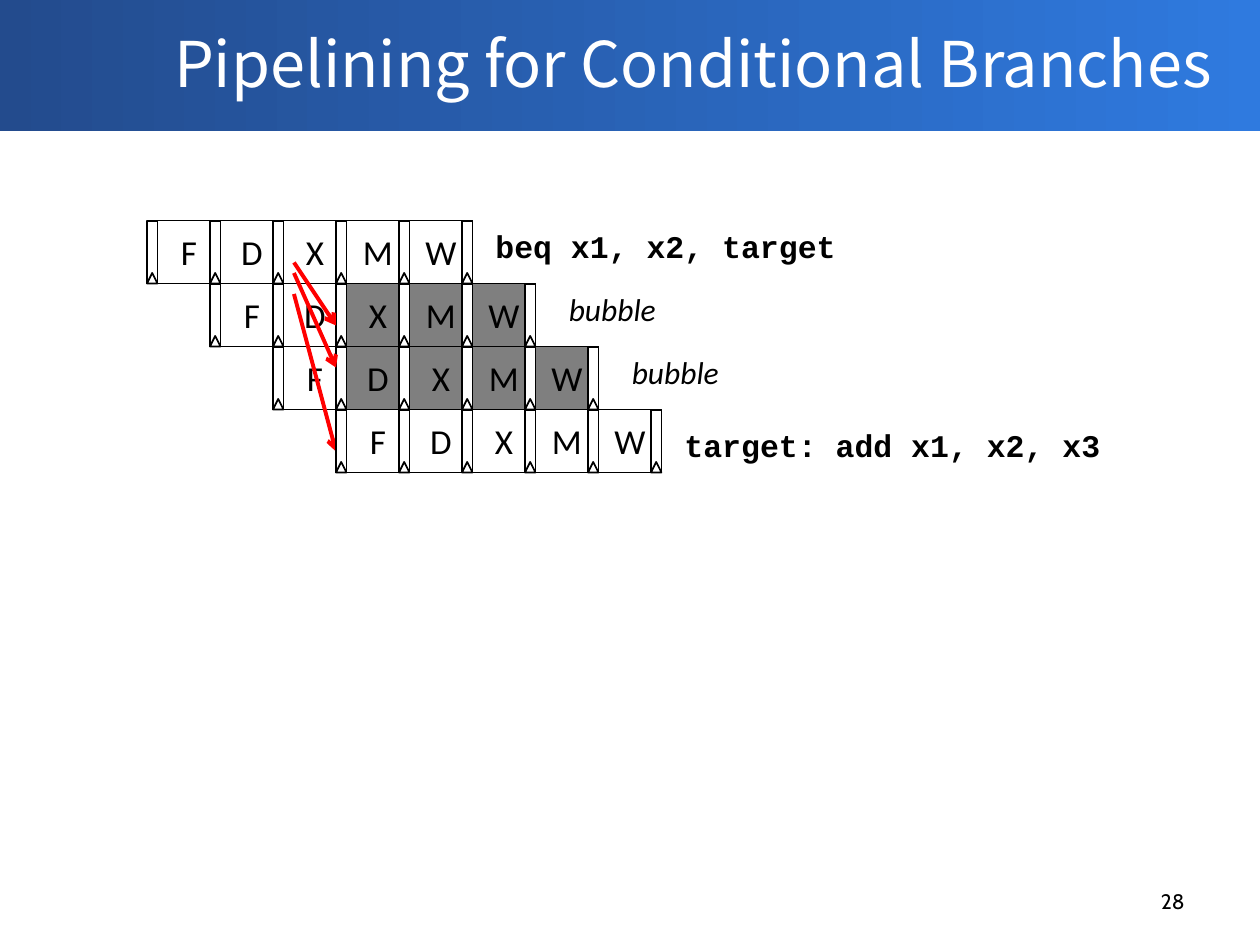
from lxml import etree
from pptx import Presentation
from pptx.dml.color import RGBColor
from pptx.enum.shapes import MSO_CONNECTOR, MSO_SHAPE
from pptx.enum.text import MSO_ANCHOR, MSO_AUTO_SIZE, PP_ALIGN
from pptx.oxml.ns import qn
from pptx.util import Pt

RECT, TRIANGLE = MSO_SHAPE.RECTANGLE, MSO_SHAPE.ISOSCELES_TRIANGLE
STRAIGHT = MSO_CONNECTOR.STRAIGHT
LEFT, CENTER, RIGHT = PP_ALIGN.LEFT, PP_ALIGN.CENTER, PP_ALIGN.RIGHT
TOP, MIDDLE = MSO_ANCHOR.TOP, MSO_ANCHOR.MIDDLE

BLACK = RGBColor(0x00, 0x00, 0x00)
WHITE = RGBColor(0xFF, 0xFF, 0xFF)
GRAY = RGBColor(0x7F, 0x7F, 0x7F)
RED = RGBColor(0xFF, 0x00, 0x00)
NAVY = RGBColor(0x23, 0x4B, 0x8D)
BLUE = RGBColor(0x2F, 0x7A, 0xDF)

TITLE = "Pipelining for Conditional Branches"
PAGE = "28"
STAGES = "FDXMW"
CODE = dict(font="Courier New", bold=True)
NOTE = dict(font="Calibri", italic=True)
# label, its left, top and width, its format, first squashed stage
INSTRUCTIONS = [
    ("beq x1, x2, target", 276, 126, 211, CODE, 5),
    ("bubble", 318, 162, 69, NOTE, 2),
    ("bubble", 354, 198, 69, NOTE, 1),
    ("target: add x1, x2, x3", 384, 240, 254, CODE, 5),
]
# start and end of each arrow out of the X stage
ARROWS = [
    ((168, 156), (192, 210)),
    ((168, 150), (192, 186)),
    ((168, 168), (192, 258)),
]

GRID_LEFT, GRID_TOP, CELL = 90, 126, 36
LATCH, LATCH_LENGTH = 6, 35.3


def write(tf, text, size=18, font="Calibri", color=BLACK, bold=None, italic=None,
          align=LEFT, anchor=TOP, margin=None, wrap=True):
    tf.word_wrap = wrap
    tf.vertical_anchor = anchor
    if margin is not None:
        tf.margin_left = tf.margin_right = Pt(margin)
        tf.margin_top = tf.margin_bottom = Pt(margin)
    p = tf.paragraphs[0]
    p.alignment = align
    r = p.add_run()
    r.text = text
    f = r.font
    f.size, f.name, f.bold, f.italic = Pt(size), font, bold, italic
    f.color.rgb = color


def add_box(slide, kind, x, y, w, h, fill=WHITE):
    sp = slide.shapes.add_shape(kind, Pt(x), Pt(y), Pt(w), Pt(h))
    sp.shadow.inherit = False
    sp.fill.solid()
    sp.fill.fore_color.rgb = fill
    sp.line.color.rgb = BLACK
    sp.line.width = Pt(1)
    return sp


def add_textbox(slide, text, x, y, w, h, **fmt):
    tf = slide.shapes.add_textbox(Pt(x), Pt(y), Pt(w), Pt(h)).text_frame
    write(tf, text, **fmt)
    return tf


def add_latch(slide, right, top):
    """Draw the pipeline register, with its clock mark, that ends at right."""
    bar = add_box(slide, RECT, right - (LATCH + LATCH_LENGTH) / 2,
                  top + (CELL - LATCH) / 2, LATCH_LENGTH, LATCH)
    bar.rotation = 270
    add_box(slide, TRIANGLE, right - LATCH, top + CELL - LATCH, LATCH, LATCH)


def add_instruction(slide, row):
    label, x, y, width, fmt, squashed = INSTRUCTIONS[row]
    left, top = GRID_LEFT + row * CELL, GRID_TOP + row * CELL
    add_latch(slide, left, top)
    for i, stage in enumerate(STAGES):
        cell = add_box(slide, RECT, left + i * CELL, top, CELL, CELL,
                       GRAY if i >= squashed else WHITE)
        write(cell.text_frame, stage, size=20, align=CENTER, anchor=MIDDLE, margin=0)
        add_latch(slide, left + (i + 1) * CELL, top)
    tf = add_textbox(slide, label, x, y, width, 29, wrap=False, **fmt)
    tf.auto_size = MSO_AUTO_SIZE.SHAPE_TO_FIT_TEXT


def add_arrow(slide, start, end):
    line = slide.shapes.add_connector(STRAIGHT, *map(Pt, start + end))
    line.line.color.rgb = RED
    line.line.width = Pt(2.25)
    etree.SubElement(line.line._get_or_add_ln(), qn("a:tailEnd"), type="arrow")
    etree.SubElement(line._element.spPr, qn("a:effectLst"))


def add_header(slide):
    banner = slide.shapes.add_shape(RECT, 0, Pt(-2), Pt(720), Pt(77))
    banner.shadow.inherit = False
    banner.line.fill.background()
    banner.fill.gradient()
    banner.fill.gradient_angle = 0
    for stop, color, position in zip(banner.fill.gradient_stops, (NAVY, BLUE), (0, 1)):
        stop.color.rgb = color
        stop.position = position
    title = slide.shapes.title
    title._element.addprevious(banner._element)
    title.left, title.top, title.width, title.height = Pt(72), 0, Pt(648), Pt(71)
    write(title.text_frame, TITLE, size=36, font="Noto Sans CJK SC", color=WHITE,
          align=CENTER, anchor=MIDDLE)
    title.text_frame.auto_size = MSO_AUTO_SIZE.NONE


def main():
    prs = Presentation()
    prs.slide_width, prs.slide_height = Pt(720), Pt(540)
    slide = prs.slides.add_slide(prs.slide_layouts[5])
    add_header(slide)
    add_textbox(slide, PAGE, 516, 500.4, 168, 29, size=12, font="Cabin",
                align=RIGHT, anchor=MIDDLE)
    target = len(INSTRUCTIONS) - 1
    for row in range(target):
        add_instruction(slide, row)
    for start, end in ARROWS:
        add_arrow(slide, start, end)
    add_instruction(slide, target)
    prs.save("out.pptx")


if __name__ == "__main__":
    main()
